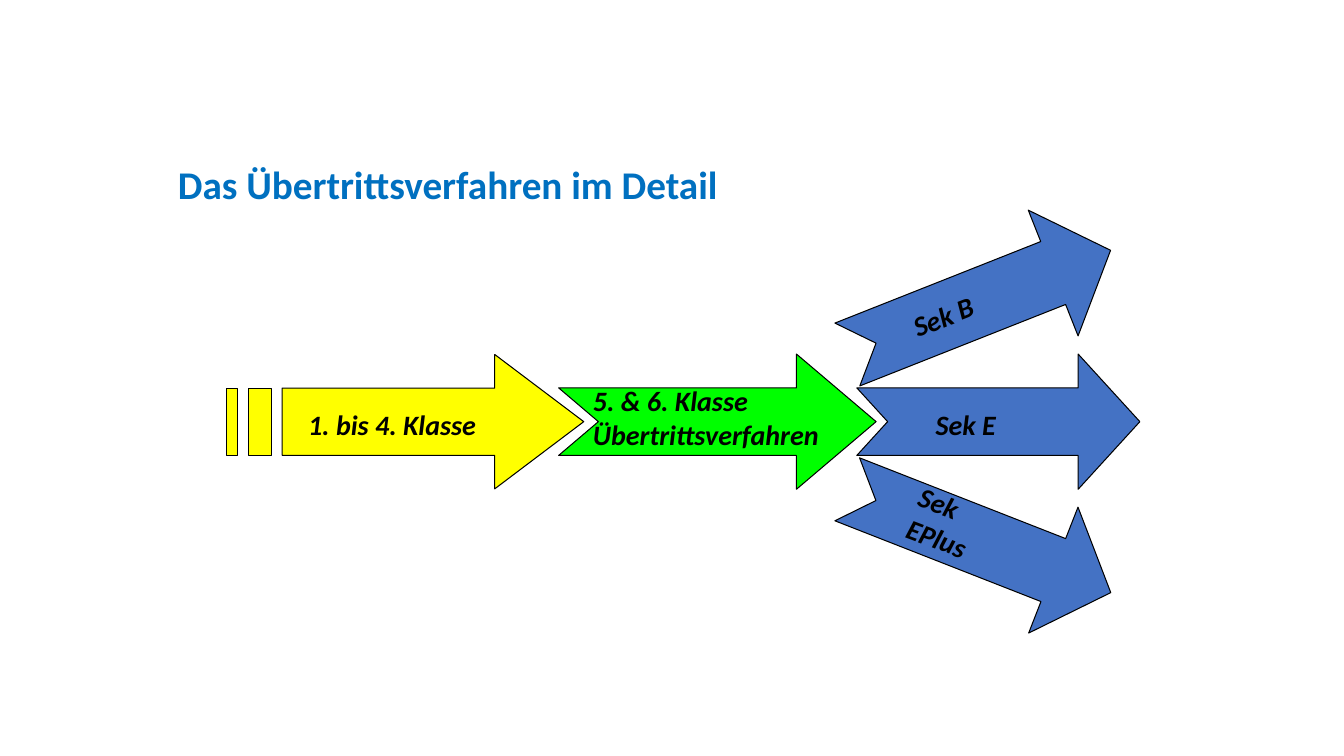
from dataclasses import dataclass

import pptx
import pptx.dml.color
import pptx.enum.shapes
import pptx.enum.text
import pptx.util

COLUMNS, ROWS = 160, 90
CELL = pptx.util.Inches(7.5) // ROWS
FONT = "Calibri"
BLACK, BLUE, GREEN, YELLOW, TITLE_BLUE = "000000", "4472C4", "00FF00", "FFFF00", "0070C0"
AXIS = 50.2
BRANCH_OFFSET = 14.2
ARROW_HEIGHT = 16.1
HEAD_HALF, SHAFT_HALF = 8, 4


@dataclass(frozen=True)
class Box:
    column: float
    row: float
    width: float
    height: float

    def emu(self) -> tuple[int, ...]:
        return tuple(cells(n) for n in (self.column, self.row, self.width, self.height))


@dataclass(frozen=True)
class Arrow:
    column: float
    center_row: float
    width: float
    head: float
    fill: str
    rotation: float = 0


@dataclass(frozen=True)
class Label:
    text: str
    box: Box
    rotation: float = 0


BRANCHES = [
    Arrow(99.7, AXIS - BRANCH_OFFSET, 33.7, 0.456, BLUE, -21.6),
    Arrow(99.7, AXIS + BRANCH_OFFSET, 33.7, 0.456, BLUE, 21.4),
    Arrow(102, AXIS, 33.7, 0.456, BLUE),
]
BRANCH_LABELS = [
    Label("Sek E", Box(110.2, 47.9, 14.2, 5.2)),
    Label("Sek B", Box(107.2, 34, 15.4, 5.3), -21.5),
    Label("Sek EPlus", Box(107.3, 58.3, 13.9, 9.2), 20.8),
]
PRIMARY_LABEL = Label("1. bis 4. Klasse", Box(35.5, 47.9, 27.4, 5.2))
TRANSFER = Arrow(66.5, AXIS, 37.8, 0.589, GREEN)
TRANSFER_LABEL = Label("5. & 6. Klasse\vÜbertrittsverfahren", Box(69.4, 45.1, 33, 9.2))


def cells(count: float) -> int:
    return round(count * CELL)


def color(value: str) -> pptx.dml.color.RGBColor:
    return pptx.dml.color.RGBColor.from_string(value)


def paint(shape, fill: str) -> None:
    shape.shadow.inherit = False
    shape.fill.solid()
    shape.fill.fore_color.rgb = color(fill)
    shape.line.color.rgb = color(BLACK)
    shape.line.width = pptx.util.Pt(0.75)


def add_text(slide, text: str, box: Box, *, size: float = 20, text_color: str = BLACK,
             italic: bool = True, rotation: float = 0, line_spacing: float = 1,
             anchor=pptx.enum.text.MSO_ANCHOR.TOP) -> None:
    shape = slide.shapes.add_textbox(*box.emu())
    shape.rotation = rotation
    frame = shape.text_frame
    frame.word_wrap = True
    frame.vertical_anchor = anchor
    paragraph = frame.paragraphs[0]
    paragraph.text = text
    paragraph.line_spacing = line_spacing
    for run in paragraph.runs:
        run.font.name = FONT
        run.font.size = pptx.util.Pt(size)
        run.font.bold = True
        run.font.italic = italic
        run.font.color.rgb = color(text_color)


def add_label(slide, label: Label) -> None:
    add_text(slide, label.text, label.box, rotation=label.rotation)


def add_arrow(slide, arrow: Arrow) -> None:
    box = Box(arrow.column, arrow.center_row - ARROW_HEIGHT / 2, arrow.width, ARROW_HEIGHT)
    shape = slide.shapes.add_shape(
        pptx.enum.shapes.MSO_SHAPE.NOTCHED_RIGHT_ARROW, *box.emu())
    shape.adjustments[0] = 0.5
    shape.adjustments[1] = arrow.head
    shape.rotation = arrow.rotation
    paint(shape, arrow.fill)


def add_striped_arrow(slide) -> None:
    top, bottom = AXIS - SHAFT_HALF, AXIS + SHAFT_HALF
    head, tail, tip = 58.9, 33.6, 69.5
    contours = [[(head, AXIS - HEAD_HALF), (head, top), (tail, top), (tail, bottom),
                 (head, bottom), (head, AXIS + HEAD_HALF), (tip, AXIS)]]
    for left, right in ((29.6, 32.3), (27, 28.3)):
        contours.append([(left, top), (left, bottom), (right, bottom), (right, top)])
    outlines = [[(cells(x), cells(y)) for x, y in contour] for contour in contours]
    builder = slide.shapes.build_freeform(*outlines[0][0])
    for outline in outlines:
        builder.move_to(*outline[0])
        builder.add_line_segments(outline[1:], close=True)
    paint(builder.convert_to_shape(), YELLOW)


def main() -> None:
    presentation = pptx.Presentation()
    presentation.slide_width = COLUMNS * CELL
    presentation.slide_height = ROWS * CELL
    slide = presentation.slides.add_slide(presentation.slide_layouts[6])
    add_text(slide, "Das Übertrittsverfahren im Detail", Box(20, 15.7, 102, 13),
             size=28, text_color=TITLE_BLUE, italic=False, line_spacing=0.9,
             anchor=pptx.enum.text.MSO_ANCHOR.MIDDLE)
    add_striped_arrow(slide)
    add_label(slide, PRIMARY_LABEL)
    for arrow in BRANCHES:
        add_arrow(slide, arrow)
    for label in BRANCH_LABELS:
        add_label(slide, label)
    add_arrow(slide, TRANSFER)
    add_label(slide, TRANSFER_LABEL)
    presentation.save("out.pptx")


if __name__ == "__main__":
    main()
